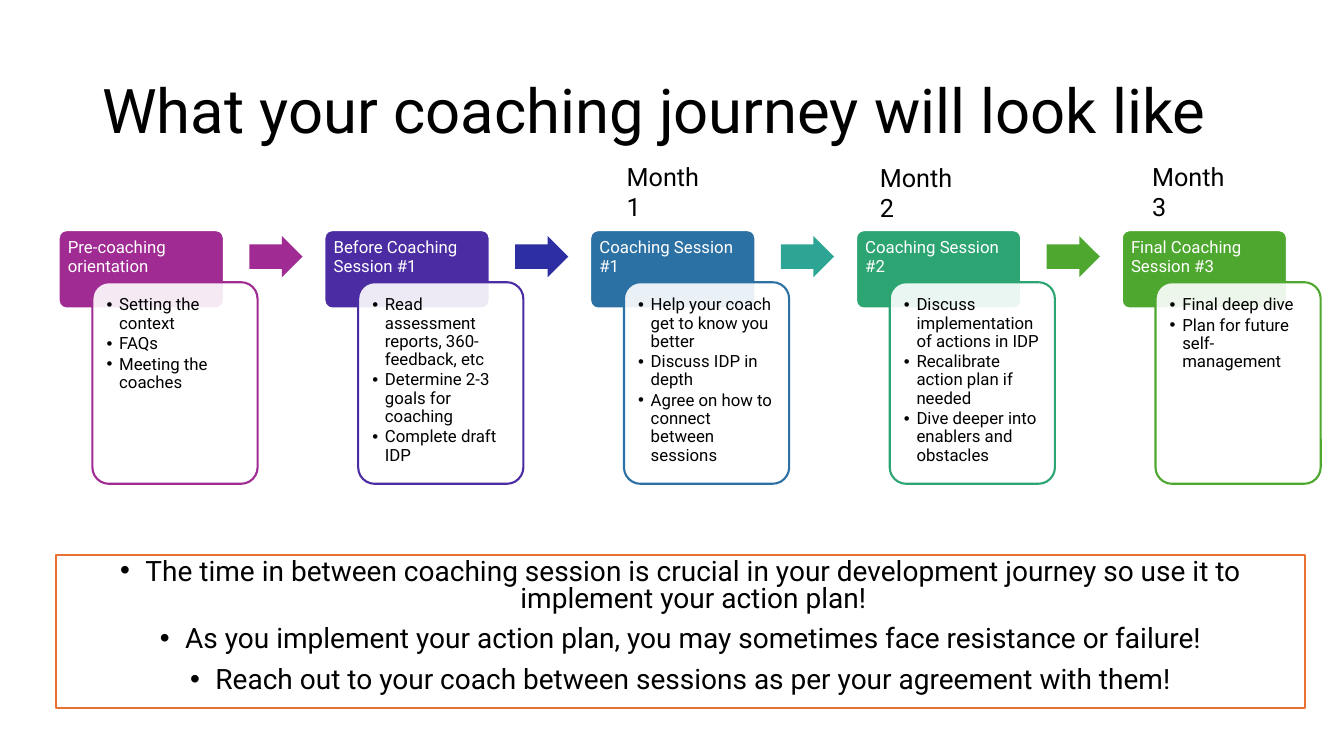
from lxml import etree
from pptx import Presentation
from pptx import util as u
from pptx.dml.color import RGBColor
from pptx.enum import shapes, text
from pptx.oxml import ns

Pt = u.Pt
TITLE = "What your coaching journey will look like"
STEPS = [
    ("Pre-coaching orientation", "A02B93", "A02B93",
     ["Setting the context", "FAQs", "Meeting the coaches"]),
    ("Before Coaching Session #1", "4B2CA2", "2C2EA2",
     ["Read assessment reports, 360-feedback, etc",
      "Determine 2-3 goals for coaching", "Complete draft IDP"]),
    ("Coaching Session #1", "2C71A4", "2DA594",
     ["Help your coach get to know you better", "Discuss IDP in depth",
      "Agree on how to connect between sessions"]),
    ("Coaching Session #2", "2DA573", "4EA72E",
     ["Discuss implementation of actions in IDP",
      "Recalibrate action plan if needed",
      "Dive deeper into enablers and obstacles"]),
    ("Final Coaching Session #3", "4EA72E", None,
     ["Final deep dive", "Plan for future self-management"]),
]
MONTHS = [("Month 1", 440.6, 111.6), ("Month 2", 621.4, 112.3),
          ("Month 3", 815.8, 111.6)]
ADVICE = [
    "The time in between coaching session is crucial in your development journey so use it to implement your action plan!",
    "As you implement your action plan, you may sometimes face resistance or failure!",
    "Reach out to your coach between sessions as per your agreement with them!",
]
THEME = {"font": "Roboto", "ink": "000000", "paper": "FFFFFF", "accent": "E97132",
         "title": 44, "advice": 20, "month": 18, "step": 12, "rule": 1.5}
FIRST_LEFT, PITCH = 41.9, 189.84
HEADER = (0, 164.4, 118, 56)
DETAIL = (24.1, 201.6, 118, 144)
ARROW = (136.2, 168.6, 38, 29.4)

deck = Presentation()
deck.slide_width, deck.slide_height = Pt(960), Pt(540)
slide = deck.slides.add_slide(deck.slide_layouts[6])


def apply(target, values):
    for name, value in values.items():
        setattr(target, name, value)


def add_block(preset, place, fill, line=None, corners=()):
    block = slide.shapes.add_shape(preset, *map(Pt, place))
    block.shadow.inherit = False
    block.fill.solid()
    block.fill.fore_color.rgb = RGBColor.from_string(fill)
    if line:
        block.line.color.rgb = RGBColor.from_string(line)
        block.line.width = Pt(THEME["rule"])
    else:
        block.line.fill.background()
    for index, corner in enumerate(corners):
        block.adjustments[index] = corner
    return block


def write(holder, lines, size, color=THEME["ink"], frame=None, spacing=None, hang=0):
    body = holder.text_frame
    apply(body, {"word_wrap": True, "vertical_anchor": text.MSO_ANCHOR.TOP,
                 **(frame or {})})
    for index, line in enumerate(lines):
        paragraph = body.paragraphs[0] if index == 0 else body.add_paragraph()
        apply(paragraph, {"alignment": text.PP_ALIGN.LEFT, **(spacing or {})})
        if hang:
            props = paragraph._p.get_or_add_pPr()
            props.set("marL", str(Pt(hang)))
            props.set("indent", str(-Pt(hang)))
            etree.SubElement(props, ns.qn("a:buFont")).set("typeface", "Arial")
            etree.SubElement(props, ns.qn("a:buChar")).set("char", "•")
        run = paragraph.add_run()
        run.text = line
        apply(run.font, {"name": THEME["font"], "size": Pt(size)})
        run.font.color.rgb = RGBColor.from_string(color)


def margins(side, top):
    return {"margin_left": Pt(side), "margin_right": Pt(side),
            "margin_top": Pt(top), "margin_bottom": Pt(3.6)}


def shifted(place, left):
    return (place[0] + left, *place[1:])


rounded = shapes.MSO_SHAPE.ROUNDED_RECTANGLE
for position, (name, color, arrow_color, details) in enumerate(STEPS):
    left = FIRST_LEFT + position * PITCH
    header = add_block(rounded, shifted(HEADER, left), color, THEME["paper"], [0.1])
    write(header, [name], THEME["step"], THEME["paper"], margins(5, 5),
          {"line_spacing": 0.9, "space_after": Pt(4.2)})
    detail = add_block(rounded, shifted(DETAIL, left), THEME["paper"], color, [0.1])
    tint = detail.fill._xPr.find(".//" + ns.qn("a:srgbClr"))
    etree.SubElement(tint, ns.qn("a:alpha")).set("val", "90000")
    write(detail, details, THEME["step"], frame=margins(6.7, 6.7),
          spacing={"line_spacing": 0.9, "space_after": Pt(1.8)}, hang=9)
    if arrow_color:
        add_block(shapes.MSO_SHAPE.RIGHT_ARROW, shifted(ARROW, left), arrow_color,
                  corners=[0.6, 0.5])

title = slide.shapes.add_textbox(*map(Pt, (66, 28.75, 828, 104.4)))
write(title, [TITLE], THEME["title"],
      frame={"vertical_anchor": text.MSO_ANCHOR.MIDDLE}, spacing={"line_spacing": 0.9})

advice = add_block(shapes.MSO_SHAPE.RECTANGLE, (40.2, 396.2, 892.3, 109.6),
                   THEME["paper"], THEME["accent"])
write(advice, ADVICE, THEME["advice"], hang=18,
      spacing={"alignment": text.PP_ALIGN.CENTER, "line_spacing": 0.8,
               "space_before": Pt(10)})

for name, left, top in MONTHS:
    month = slide.shapes.add_textbox(*map(Pt, (left, top, 78.5, 29)))
    write(month, [name], THEME["month"],
          frame={"auto_size": text.MSO_AUTO_SIZE.SHAPE_TO_FIT_TEXT})

deck.save("out.pptx")
